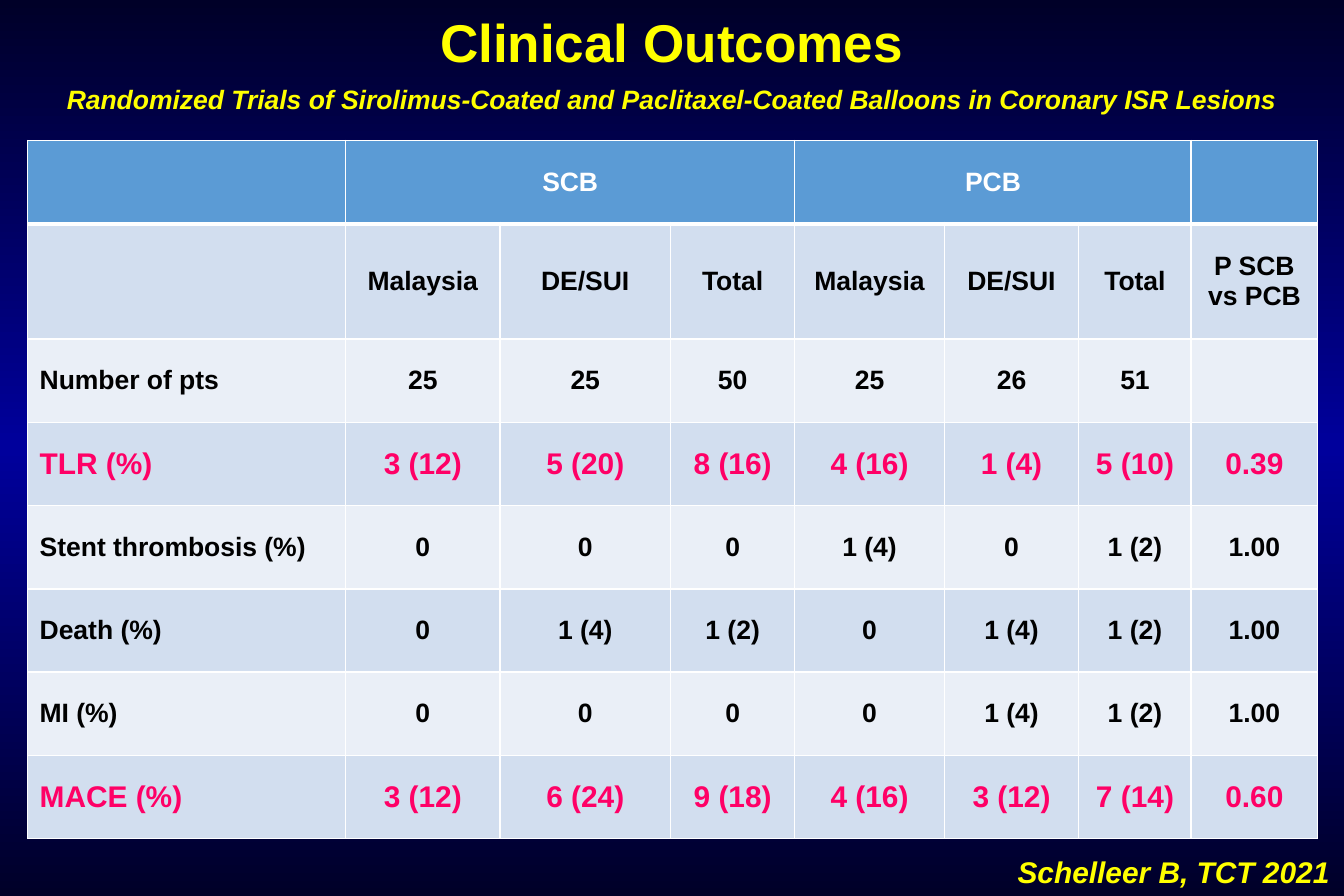
"""Build the Clinical Outcomes slide comparing SCB and PCB trial results."""
import copy

import pptx
import pptx.dml.color
import pptx.enum.text
import pptx.oxml
import pptx.oxml.ns
import pptx.util

Cm = pptx.util.Cm
RGBColor = pptx.dml.color.RGBColor
ALIGN = pptx.enum.text.PP_ALIGN
ANCHOR = pptx.enum.text.MSO_ANCHOR

NAVY = RGBColor(0x00, 0x00, 0x28)
BLUE = RGBColor(0x00, 0x00, 0x9C)
YELLOW = RGBColor(0xFF, 0xFF, 0x00)
WHITE = RGBColor(0xFF, 0xFF, 0xFF)
BLACK = RGBColor(0x00, 0x00, 0x00)
PINK = RGBColor(0xFF, 0x00, 0x66)
HEADER_FILL = RGBColor(0x5B, 0x9B, 0xD5)
DARK_BAND = RGBColor(0xD2, 0xDE, 0xEF)
LIGHT_BAND = RGBColor(0xEA, 0xEF, 0xF7)

SLIDE_WIDTH, SLIDE_HEIGHT = Cm(28.58), Cm(19.05)
COLUMN_WIDTHS = [6.76, 3.28, 3.63, 2.64, 3.18, 2.86, 2.39, 2.69]
ROW_HEIGHT, SUBHEADER_HEIGHT = 1.77, 2.45
GROUP_COLUMNS = [(1, 3), (4, 6)]
HIGHLIGHTED = ("TLR (%)", "MACE (%)")
OUTCOMES = [
    ["", "SCB", "", "", "PCB", "", "", ""],
    ["", "Malaysia", "DE/SUI", "Total", "Malaysia", "DE/SUI", "Total", "P SCB vs PCB"],
    ["Number of pts", "25", "25", "50", "25", "26", "51", ""],
    ["TLR (%)", "3 (12)", "5 (20)", "8 (16)", "4 (16)", "1 (4)", "5 (10)", "0.39"],
    ["Stent thrombosis (%)", "0", "0", "0", "1 (4)", "0", "1 (2)", "1.00"],
    ["Death (%)", "0", "1 (4)", "1 (2)", "0", "1 (4)", "1 (2)", "1.00"],
    ["MI (%)", "0", "0", "0", "0", "1 (4)", "1 (2)", "1.00"],
    ["MACE (%)", "3 (12)", "6 (24)", "9 (18)", "4 (16)", "3 (12)", "7 (14)", "0.60"],
]


def set_attributes(target, values):
    for name, value in values.items():
        setattr(target, name, value)


def write_text(text_frame, text, size, color, alignment, italic=False):
    paragraph = text_frame.paragraphs[0]
    paragraph.alignment = alignment
    run = paragraph.add_run()
    run.text = text
    set_attributes(run.font, {"name": "Arial", "size": pptx.util.Pt(size),
                              "bold": True, "italic": italic})
    run.font.color.rgb = color


def paint_background(slide):
    fill = slide.background.fill
    fill.gradient()
    fill.gradient_angle = 90
    stop_list = slide.element.find(".//" + pptx.oxml.ns.qn("a:gsLst"))
    stop_list.append(copy.deepcopy(stop_list[-1]))
    for stop, position, color in zip(fill.gradient_stops, (0, 0.5, 1), (NAVY, BLUE, NAVY)):
        stop.position = position
        stop.color.rgb = color


def add_title(slide, text):
    title = slide.shapes.title
    set_attributes(title, {"left": Cm(0), "top": Cm(0.08),
                           "width": SLIDE_WIDTH, "height": Cm(1.63)})
    set_attributes(title.text_frame, {"vertical_anchor": ANCHOR.TOP, "word_wrap": True,
                                      "auto_size": pptx.enum.text.MSO_AUTO_SIZE.NONE})
    write_text(title.text_frame, text, 32, YELLOW, ALIGN.CENTER)


def add_caption(slide, text, left, top, width, height, size, alignment, wrap):
    caption = slide.shapes.add_textbox(left, top, width, height)
    caption.text_frame.word_wrap = wrap
    write_text(caption.text_frame, text, size, YELLOW, alignment, italic=True)


def add_border(cell, side, points):
    properties = cell._tc.get_or_add_tcPr()
    properties.append(pptx.oxml.parse_xml(
        f'<a:ln{side} {pptx.oxml.ns.nsdecls("a")} w="{pptx.util.Pt(points)}">'
        f'<a:solidFill><a:srgbClr val="{WHITE}"/></a:solidFill></a:ln{side}>'))


def format_cell(cell, text, row, column):
    thick_side = {0: "B", 1: "T"}.get(row)
    for side in "LRTB":
        add_border(cell, side, 3 if side == thick_side else 1)
    cell.fill.solid()
    band = LIGHT_BAND if row % 2 == 0 else DARK_BAND
    cell.fill.fore_color.rgb = HEADER_FILL if row == 0 else band
    cell.vertical_anchor = ANCHOR.MIDDLE
    if text:
        highlighted = OUTCOMES[row][0] in HIGHLIGHTED
        color = WHITE if row == 0 else PINK if highlighted else BLACK
        alignment = ALIGN.CENTER if column else ALIGN.LEFT
        write_text(cell.text_frame, text, 18 if highlighted else 16, color, alignment)


def add_outcomes_table(slide):
    row_heights = [SUBHEADER_HEIGHT if row == 1 else ROW_HEIGHT for row in range(len(OUTCOMES))]
    table = slide.shapes.add_table(
        len(OUTCOMES), len(COLUMN_WIDTHS), Cm(0.59), Cm(2.99),
        Cm(sum(COLUMN_WIDTHS)), Cm(sum(row_heights))).table
    for column, width in zip(table.columns, COLUMN_WIDTHS):
        column.width = Cm(width)
    for row, height in zip(table.rows, row_heights):
        row.height = Cm(height)
    for first, last in GROUP_COLUMNS:
        table.cell(0, first).merge(table.cell(0, last))
    for row, texts in enumerate(OUTCOMES):
        for column, text in enumerate(texts):
            format_cell(table.cell(row, column), text, row, column)


def main():
    presentation = pptx.Presentation()
    set_attributes(presentation, {"slide_width": SLIDE_WIDTH, "slide_height": SLIDE_HEIGHT})
    slide = presentation.slides.add_slide(presentation.slide_layouts.get_by_name("Title Only"))
    paint_background(slide)
    add_title(slide, "Clinical Outcomes")
    add_caption(slide, "Schelleer B, TCT 2021", Cm(21.39), Cm(18.03), Cm(7.19), Cm(1.02),
                18, ALIGN.LEFT, False)
    add_caption(slide, "Randomized Trials of Sirolimus-Coated and Paclitaxel-Coated Balloons "
                "in Coronary ISR Lesions", Cm(0), Cm(1.65), SLIDE_WIDTH, Cm(0.94),
                16, ALIGN.CENTER, True)
    add_outcomes_table(slide)
    presentation.save("out.pptx")


if __name__ == "__main__":
    main()
